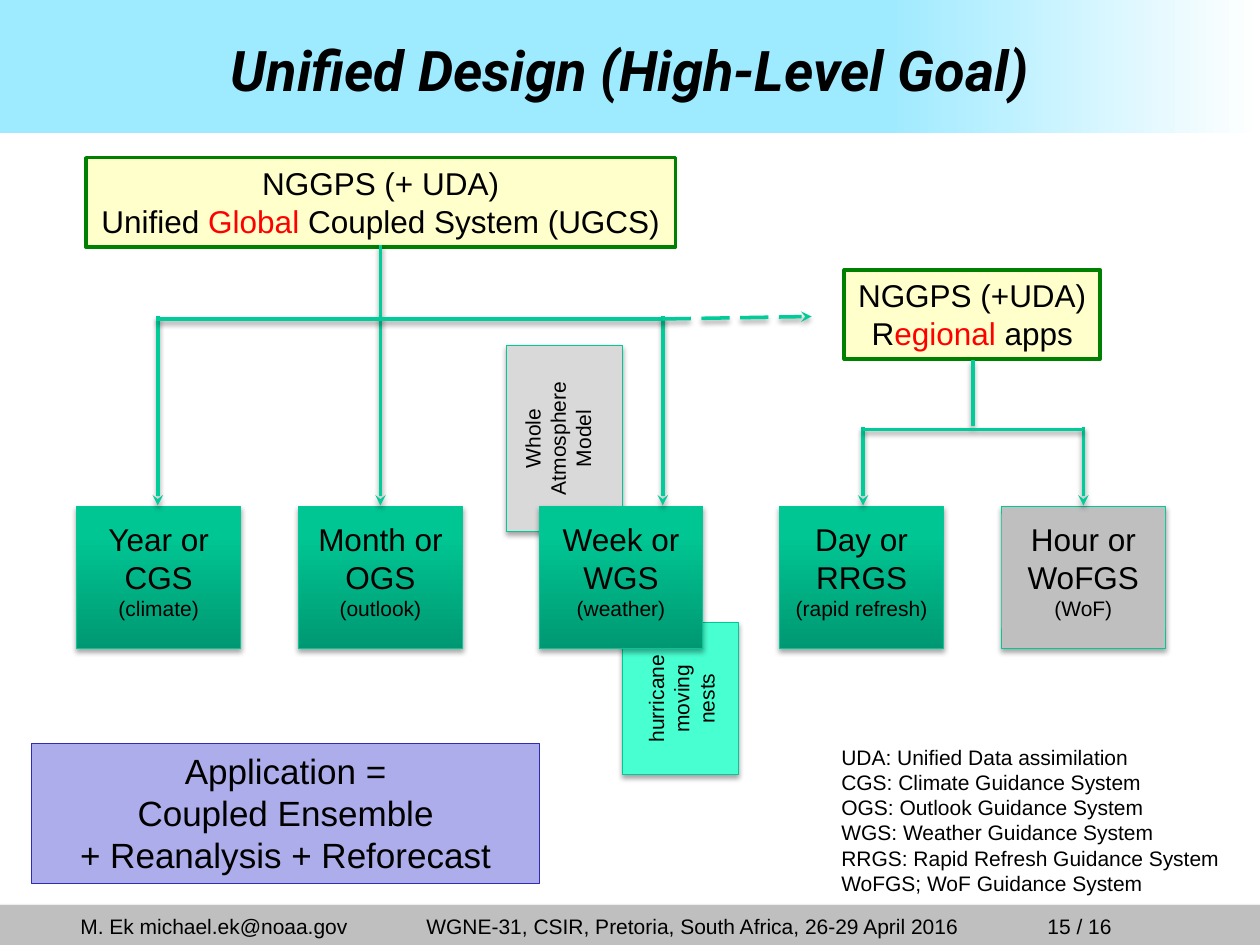
from dataclasses import dataclass

from lxml import etree
from pptx import Presentation
from pptx.dml.color import RGBColor
from pptx.enum.dml import MSO_LINE
from pptx.enum.shapes import MSO_CONNECTOR, MSO_SHAPE
from pptx.enum.text import MSO_ANCHOR, MSO_AUTO_SIZE, PP_ALIGN
from pptx.oxml.ns import qn
from pptx.util import Cm, Pt

RECTANGLE = MSO_SHAPE.RECTANGLE
STRAIGHT = MSO_CONNECTOR.STRAIGHT
LONG_DASH = MSO_LINE.LONG_DASH
LEFT, CENTER, RIGHT = PP_ALIGN.LEFT, PP_ALIGN.CENTER, PP_ALIGN.RIGHT
TOP, MIDDLE, BOTTOM = MSO_ANCHOR.TOP, MSO_ANCHOR.MIDDLE, MSO_ANCHOR.BOTTOM
GROW = MSO_AUTO_SIZE.SHAPE_TO_FIT_TEXT


@dataclass(frozen=True)
class Theme:
    font: str = "Arial"
    title_font: str = "Roboto"
    title_size: int = 32
    goal_size: int = 20
    body_size: int = 18
    small_size: int = 12
    text: str = "000000"
    accent: str = "FF0000"
    gray: str = "BFBFBF"
    model_gray: str = "D9D9D9"
    nest: str = "47FFD1"
    edge: str = "00C896"
    arrow: str = "00CC99"
    system: str = "FFFFCC"
    system_edge: str = "008000"
    goal: str = "ADADEB"
    goal_edge: str = "2D2DB9"
    header: tuple = ((0, "9EEAFF"), (70, "9EEAFF"), (100, "FFFFFF"))
    product: tuple = ((0, "009872"), (80, "00C694"), (100, "00C795"))


THEME = Theme()


def rgb(value):
    return RGBColor.from_string(value)


def add_shadow(effects, opacity=35):
    shadow = etree.SubElement(
        effects, qn("a:outerShdw"), blurRad=str(Pt(3.1)), dist=str(Pt(1.8)),
        dir="5400000", rotWithShape="0")
    color = etree.SubElement(shadow, qn("a:srgbClr"), val="000000")
    etree.SubElement(color, qn("a:alpha"), val=str(opacity * 1000))


def fill_gradient(shape, stops, angle):
    shape.fill.gradient()
    shape.fill.gradient_angle = angle
    stop_list = shape.element.spPr.find(".//" + qn("a:gsLst"))
    for stop in list(stop_list):
        stop_list.remove(stop)
    for percent, color in stops:
        stop = etree.SubElement(stop_list, qn("a:gs"), pos=str(percent * 1000))
        etree.SubElement(stop, qn("a:srgbClr"), val=color)


def add_panel(page, frame, fill, edge=None, weight=0.75, shadow=False, angle=0):
    panel = page.shapes.add_shape(RECTANGLE, *map(Cm, frame))
    panel.shadow.inherit = False
    if isinstance(fill, tuple):
        fill_gradient(panel, fill, angle)
    else:
        panel.fill.solid()
        panel.fill.fore_color.rgb = rgb(fill)
    if edge:
        panel.line.color.rgb = rgb(edge)
        panel.line.width = Pt(weight)
    else:
        panel.line.fill.background()
    if shadow:
        add_shadow(panel.element.spPr.find(qn("a:effectLst")))
    return panel


def add_span(para, text, size, color=THEME.text, font=THEME.font):
    span = para.add_run()
    span.text = text
    span.font.size = Pt(size)
    span.font.name = font
    span.font.color.rgb = rgb(color)
    return span


def write(box, lines, align=CENTER, anchor=TOP, wrap=True):
    frame = box.text_frame
    frame.word_wrap = wrap
    frame.auto_size = GROW
    frame.vertical_anchor = anchor
    for index, spans in enumerate(lines):
        para = frame.add_paragraph() if index else frame.paragraphs[0]
        para.alignment = align
        for span in spans:
            add_span(para, *span)


def add_text(page, frame, lines, **layout):
    box = page.shapes.add_textbox(*map(Cm, frame))
    write(box, lines, **layout)
    return box


def add_title(page, text):
    box = page.shapes.add_textbox(Cm(0.64), Cm(0.41), Cm(24.13), Cm(1.98))
    box.text_frame.word_wrap = True
    box.text_frame.vertical_anchor = MIDDLE
    para = box.text_frame.paragraphs[0]
    para.alignment = CENTER
    span = add_span(para, text, THEME.title_size, font=THEME.title_font)
    span.font.bold = True
    span.font.italic = True


def add_line(page, start, end, arrow=False, dash=None):
    line = page.shapes.add_connector(STRAIGHT, *map(Cm, start + end))
    line.line.color.rgb = rgb(THEME.arrow)
    line.line.width = Pt(2)
    if dash:
        line.line.dash_style = dash
    properties = line.element.spPr
    if arrow:
        etree.SubElement(properties.find(qn("a:ln")), qn("a:tailEnd"), type="stealth")
    add_shadow(etree.SubElement(properties, qn("a:effectLst")), 38)


def add_side_model(page, panel_frame, text_frame, fill, text):
    add_panel(page, panel_frame, fill, THEME.edge, shadow=True)
    box = add_text(page, text_frame, [[(text, THEME.small_size)]], anchor=MIDDLE)
    box.text_frame._txBody.bodyPr.set("vert", "vert270")


def add_product(page, left, name, note, fill):
    add_panel(page, (left, 10.21, 3.3, 2.87), fill, THEME.edge, shadow=True, angle=90)
    lines = [[(name, THEME.body_size)], [(note, THEME.small_size)]]
    frame = (left, 10.36, 3.3, 2.31)
    if fill == THEME.gray:
        write(add_panel(page, frame, fill), lines)
    else:
        add_text(page, frame, lines)


def add_system(page, frame, lines):
    panel = add_panel(page, frame, THEME.system, THEME.system_edge, 2)
    sized = [[(text, THEME.body_size, color) for text, color in spans] for spans in lines]
    write(panel, sized, wrap=False)


def add_footer(page):
    add_panel(page, (-0.05, 18.24, 25.45, 0.94), THEME.gray, shadow=True)
    for left, width, align, text in (
        (1.37, 6.22, LEFT, "M. Ek michael.ek@noaa.gov"),
        (20.35, 2.31, RIGHT, "15 / 16"),
        (8.26, 11.4, CENTER, "WGNE-31, CSIR, Pretoria, South Africa, 26-29 April 2016"),
    ):
        add_text(page, (left, 18.29, width, 0.76), [[(text, THEME.small_size)]],
                 align=align, anchor=BOTTOM)


def add_arrows(page):
    for x, top in ((3.18, 6.38), (7.67, 4.93), (13.36, 6.38), (17.4, 8.61), (21.84, 8.61)):
        add_line(page, (x, top), (x, 10.19), arrow=True)
    add_line(page, (19.61, 7.26), (19.61, 8.59))
    add_line(page, (17.4, 8.66), (21.84, 8.66))
    add_line(page, (3.15, 6.43), (13.36, 6.43))
    add_line(page, (13.36, 6.43), (16.36, 6.38), arrow=True, dash=LONG_DASH)


def main():
    deck = Presentation()
    deck.slide_width, deck.slide_height = Cm(25.4), Cm(19.05)
    page = deck.slides.add_slide(deck.slide_layouts[6])

    add_footer(page)
    add_panel(page, (-0.05, 0, 25.45, 2.69), THEME.header)
    add_title(page, "Unified Design (High-Level Goal)")

    add_side_model(page, (12.55, 12.55, 2.34, 3.07), (12.7, 12.93, 2.06, 2.31),
                   THEME.nest, "hurricane moving nests")
    add_side_model(page, (10.21, 6.96, 2.34, 3.76), (10.21, 6.96, 2.06, 3.76),
                   THEME.model_gray, "Whole Atmosphere Model")
    for left, name, note, fill in (
        (1.55, "Year or CGS", "(climate)", THEME.product),
        (6.02, "Month or OGS", "(outlook)", THEME.product),
        (10.87, "Week or WGS", "(weather)", THEME.product),
        (15.72, "Day or RRGS", "(rapid refresh)", THEME.product),
        (20.19, "Hour or WoFGS", "(WoF)", THEME.gray),
    ):
        add_product(page, left, name, note, fill)

    add_system(page, (1.73, 3.18, 11.89, 1.8), [
        [("NGGPS (+ UDA)", THEME.text)],
        [("Unified ", THEME.text), ("Global", THEME.accent),
         (" Coupled System (UGCS)", THEME.text)]])
    add_system(page, (17.02, 5.44, 5.16, 1.8), [
        [("NGGPS (+UDA)", THEME.text)],
        [("R", THEME.text), ("egional ", THEME.accent), ("apps", THEME.text)]])
    add_arrows(page)

    goal = add_panel(page, (0.64, 14.99, 10.24, 2.82), THEME.goal, THEME.goal_edge)
    write(goal, [[(text, THEME.goal_size)] for text in (
        "Application =", "Coupled Ensemble", "+ Reanalysis + Reforecast")])
    add_text(page, (16.71, 14.88, 8.2, 3.33), [[(text, THEME.small_size)] for text in (
        "UDA: Unified Data assimilation",
        "CGS: Climate Guidance System",
        "OGS: Outlook Guidance System",
        "WGS: Weather Guidance System",
        "RRGS: Rapid Refresh Guidance System",
        "WoFGS; WoF Guidance System")], align=LEFT, wrap=False)
    deck.save("out.pptx")


if __name__ == "__main__":
    main()
